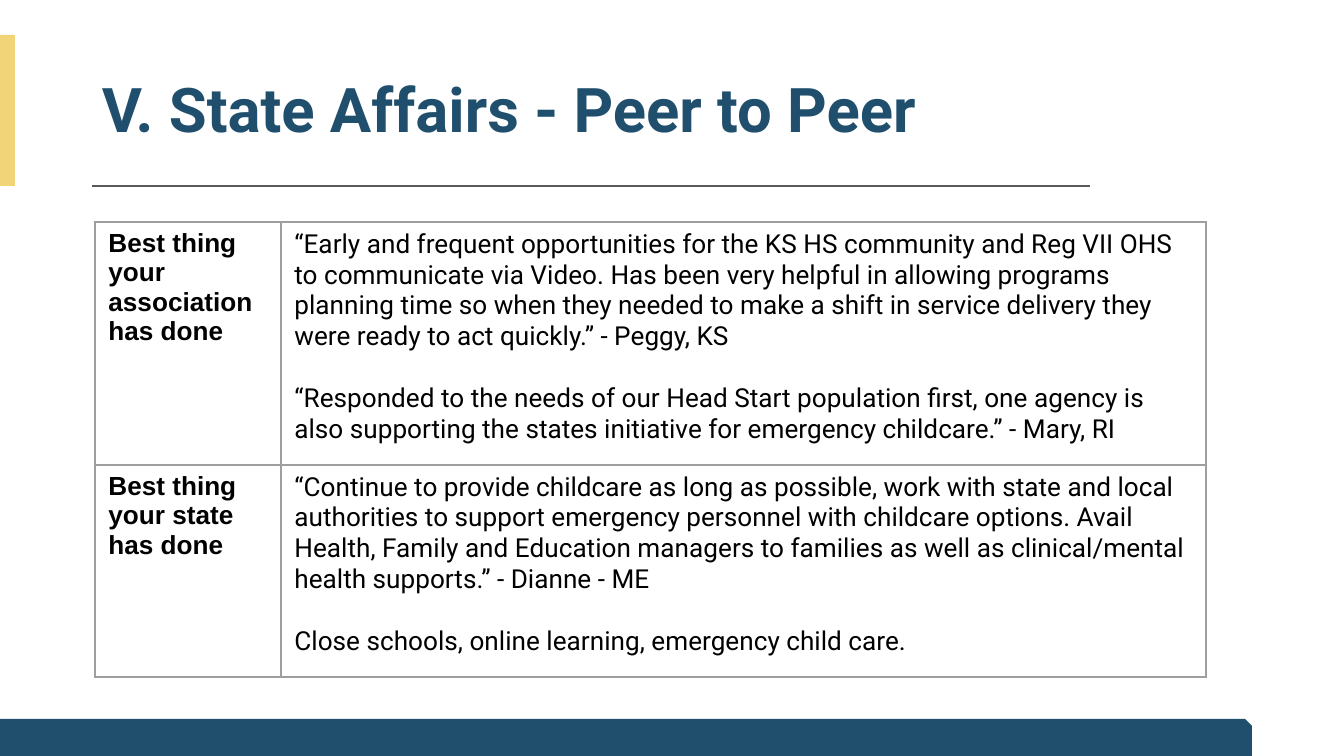
"""Build the State Affairs peer-to-peer slide with its table of quotes."""
import pptx
import pptx.dml.color
import pptx.enum.shapes
import pptx.enum.text
import pptx.oxml
import pptx.oxml.ns
import pptx.util

PX = 914400 / 134.4
NAVY = pptx.dml.color.RGBColor(0x20, 0x4F, 0x6D)
YELLOW = pptx.dml.color.RGBColor(0xF1, 0xD4, 0x78)
RULE_GREY = pptx.dml.color.RGBColor(0x59, 0x59, 0x59)
BORDER_GREY = pptx.dml.color.RGBColor(0x9E, 0x9E, 0x9E)
BLACK = pptx.dml.color.RGBColor(0, 0, 0)
DRAWING_NS = pptx.oxml.ns.nsdecls("a")


def px(*lengths):
    return [pptx.util.Emu(round(length * PX)) for length in lengths]


def write(frame, *texts, font, size, color, bold=False, line_spacing=None, gap=0, margins=(13, 13)):
    frame.word_wrap = True
    for index, text in enumerate(texts):
        paragraph = frame.paragraphs[0] if index == 0 else frame.add_paragraph()
        if index:
            paragraph.space_before = pptx.util.Pt(gap)
        if line_spacing:
            paragraph.line_spacing = line_spacing
        run = paragraph.add_run()
        run.text = text
        run.font.name = font
        run.font.size = pptx.util.Pt(size)
        run.font.bold = bold
        run.font.color.rgb = color
    across, down = px(*margins)
    frame.margin_left = frame.margin_right = across
    frame.margin_top = frame.margin_bottom = down


deck = pptx.Presentation()
deck.slide_width, deck.slide_height = px(1344, 756)
slide = deck.slides.add_slide(deck.slide_layouts[6])

title_rule = slide.shapes.add_connector(
    pptx.enum.shapes.MSO_CONNECTOR.STRAIGHT, *px(1090, 186, 92, 186))
title_rule.line.color.rgb = RULE_GREY
title_rule.line.width = pptx.util.Pt(0.75)
title_rule._element.spPr.append(pptx.oxml.parse_xml(f"<a:effectLst {DRAWING_NS}/>"))

for box, snip, color in (
    ((-1, 35, 16, 151), 0, YELLOW),
    ((-1, 719, 1253, 40), 0.17, NAVY),
):
    bar = slide.shapes.add_shape(
        pptx.enum.shapes.MSO_SHAPE.SNIP_1_RECTANGLE, *px(*box))
    bar.adjustments[0] = snip
    bar.shadow.inherit = False
    bar.fill.solid()
    bar.fill.fore_color.rgb = color
    bar.line.fill.background()

title = slide.shapes.add_textbox(*px(92, 40, 1004, 146)).text_frame
title.vertical_anchor = pptx.enum.text.MSO_ANCHOR.MIDDLE
write(title, "V. State Affairs - Peer to Peer", font="Roboto", size=33,
      color=NAVY, bold=True, line_spacing=0.9, margins=(10, 5))

answers = (
    ("Best thing your association has done", (
        "“Early and frequent opportunities for the KS HS community and Reg VII OHS "
        "to communicate via Video. Has been very helpful in allowing programs "
        "planning time so when they needed to make a shift in service delivery they "
        "were ready to act quickly.” - Peggy, KS",
        "“Responded to the needs of our Head Start population first, one agency is "
        "also supporting the states initiative for emergency childcare.” - Mary, RI",
    )),
    ("Best thing your state has done", (
        "“Continue to provide childcare as long as possible, work with state and local "
        "authorities to support emergency personnel with childcare options. Avail "
        "Health, Family and Education managers to families as well as clinical/mental "
        "health supports.” - Dianne - ME",
        "Close schools, online learning, emergency child care.",
    )),
)
table = slide.shapes.add_table(2, 2, *px(95, 222, 1111, 455)).table
table.first_row = table.horz_banding = False
for column, width in zip(table.columns, px(186, 925)):
    column.width = width
for row, height in zip(table.rows, px(243, 212)):
    row.height = height

for row, (question, quotes) in zip(table.rows, answers):
    question_cell, quotes_cell = row.cells
    write(question_cell.text_frame, question, font="Arial", size=14, color=BLACK, bold=True)
    write(quotes_cell.text_frame, *quotes, font="Roboto", size=14, color=BLACK, gap=16.5)
    for cell in row.cells:
        cell.fill.background()
        for position, side in enumerate(("lnL", "lnR", "lnT", "lnB")):
            cell._tc.get_or_add_tcPr().insert(position, pptx.oxml.parse_xml(
                f'<a:{side} {DRAWING_NS} w="{pptx.util.Pt(0.75)}"><a:solidFill>'
                f'<a:srgbClr val="{BORDER_GREY}"/></a:solidFill></a:{side}>'))

deck.save("out.pptx")
